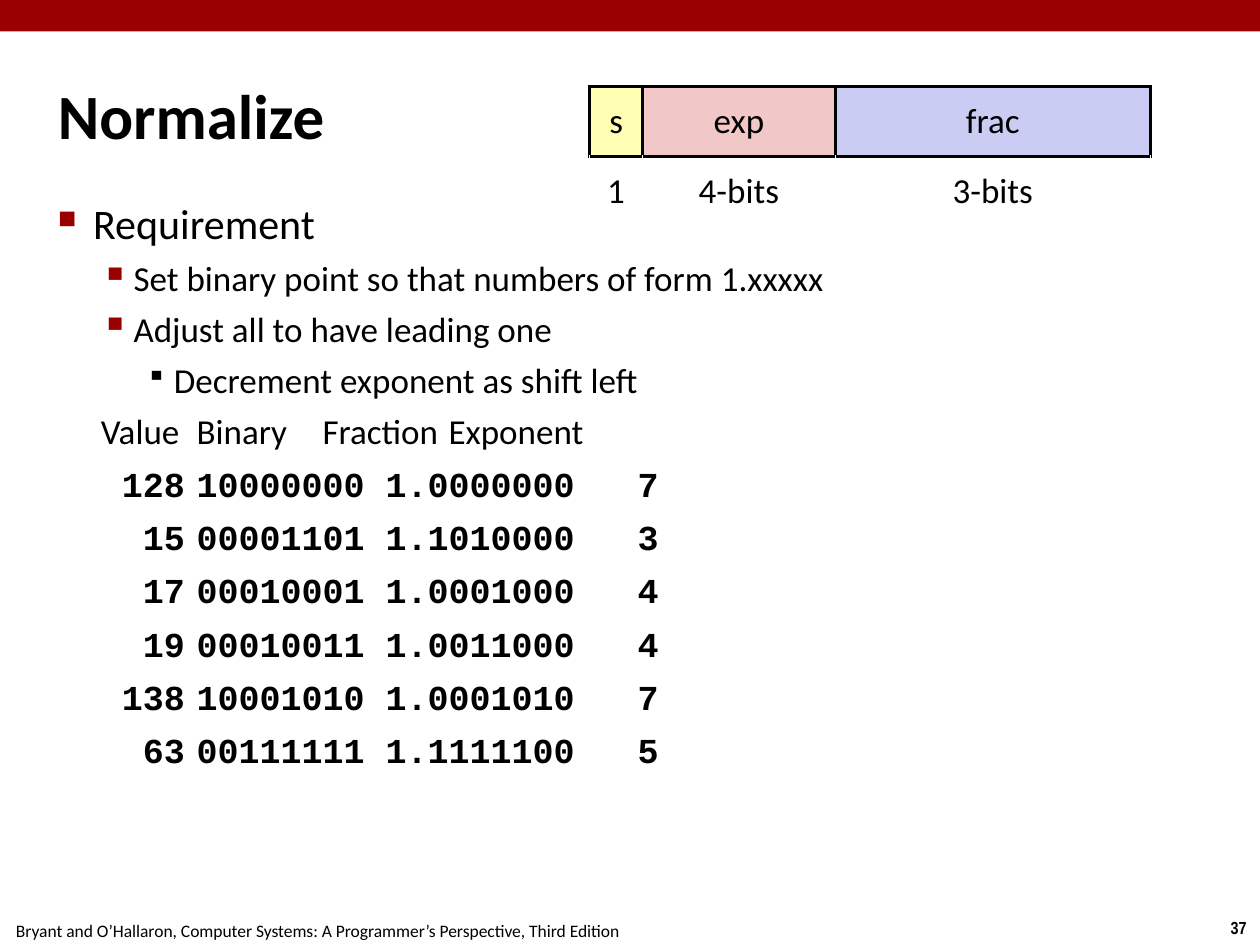
from lxml.etree import SubElement
from pptx import Presentation
from pptx.dml.color import RGBColor
from pptx.enum.shapes import MSO_SHAPE as Shape
from pptx.enum.text import MSO_ANCHOR as Anchor, PP_ALIGN as Align
from pptx.oxml.ns import qn
from pptx.util import Inches, Pt

BLACK, RED = "000000", "990000"
WIDTH, HEIGHT = 10, 7.5
LEFT, BODY_WIDTH, INSET = 0.42, 9.17, 0.04

FOOTER = "Bryant and O’Hallaron, Computer Systems: A Programmer’s Perspective, Third Edition"
BULLETS = [
    ("requirement", "Requirement"),
    ("step", "Set binary point so that numbers of form 1.xxxxx"),
    ("step", "Adjust all to have leading one"),
    ("detail", "Decrement exponent as shift left"),
]
HEADINGS = ["Value", "Binary", "Fraction", "Exponent"]
NUMBERS = [
    (128, "10000000", "1.0000000", 7),
    (15, "00001101", "1.1010000", 3),
    (17, "00010001", "1.0001000", 4),
    (19, "00010011", "1.0011000", 4),
    (138, "10001010", "1.0001010", 7),
    (63, "00111111", "1.1111100", 5),
]
FIELDS = [
    ("s", "1", 0.42, "FFFEB2"),
    ("exp", "4-bits", 1.53, "F1C7C7"),
    ("frac", "3-bits", 2.5, "CBCCF3"),
]
# level, left margin, hanging, size, space before, font, bold, bullet
STYLES = {
    "requirement": (0, 0.28, 0.28, 24, 6, "Calibri", False, ("■", RED, 60)),
    "step": (1, 0.6, 0.26, 20, 5, "Calibri", False, ("▪", RED, 110)),
    "detail": (2, 0.92, 0.22, 20, 5, "Calibri", False, ("▪", BLACK, 80)),
    "heading": (1, 0.6, 0.26, 20, 5, "Calibri", False, None),
    "number": (1, 0.6, 0.26, 20, 6.4, "Courier New", True, None),
}


def color(value):
    return RGBColor.from_string(value)


def style_runs(para, size, font="Calibri", bold=False):
    for span in para.runs:
        span.font.size, span.font.name, span.font.bold = Pt(size), font, bold
        span.font.color.rgb = color(BLACK)


def add_text(page, area, text, size, font="Calibri", bold=False, align=Align.LEFT,
             anchor=Anchor.TOP, wrap=True, inset=INSET):
    frame = page.shapes.add_textbox(*map(Inches, area)).text_frame
    frame.word_wrap, frame.vertical_anchor = wrap, anchor
    for side in ("left", "top", "right", "bottom"):
        setattr(frame, f"margin_{side}", Inches(inset))
    frame.text = text
    for para in frame.paragraphs:
        para.alignment = align
        style_runs(para, size, font, bold)
    return frame


def style_paragraph(para, style):
    level, margin, hanging, size, before, font, bold, bullet = STYLES[style]
    para.level, para.space_before = level, Pt(before)
    style_runs(para, size, font, bold)
    props = para._p.get_or_add_pPr()
    props.set("marL", str(Inches(margin)))
    props.set("indent", str(-Inches(hanging)))
    if bullet:
        char, tint, share = bullet
        SubElement(SubElement(props, qn("a:buClr")), qn("a:srgbClr"), val=tint)
        SubElement(props, qn("a:buSzPct"), val=str(share * 1000))
        SubElement(props, qn("a:buChar"), char=char)
    else:
        SubElement(props, qn("a:buNone"))


def add_border(cell, sides):
    props = cell._tc.get_or_add_tcPr()
    for position, side in enumerate(sides):
        line = props.makeelement(qn(f"a:ln{side}"), {"w": str(Pt(2))})
        fill = SubElement(line, qn("a:solidFill"))
        SubElement(fill, qn("a:srgbClr"), val=BLACK)
        props.insert(position, line)


def add_field_table(page):
    widths = [field[2] for field in FIELDS]
    area = (4.68, 0.69, sum(widths), 1.11)
    table = page.shapes.add_table(2, len(FIELDS), *map(Inches, area)).table
    table.first_row = table.horz_banding = False
    for column, (name, bits, width, tint) in enumerate(FIELDS):
        table.columns[column].width = Inches(width)
        for row, text in enumerate((name, bits)):
            cell = table.cell(row, column)
            cell.text = text
            cell.vertical_anchor = Anchor.MIDDLE
            for side in ("left", "top", "right", "bottom"):
                setattr(cell, f"margin_{side}", Inches(0.06))
            para = cell.text_frame.paragraphs[0]
            para.alignment = Align.CENTER
            style_runs(para, 20)
            if row == 0:
                cell.fill.solid()
                cell.fill.fore_color.rgb = color(tint)
            else:
                cell.fill.background()
            add_border(cell, "LRTB" if row == 0 else "T")


def main():
    deck = Presentation()
    deck.slide_width, deck.slide_height = Inches(WIDTH), Inches(HEIGHT)
    page = deck.slides.add_slide(deck.slide_layouts[6])

    add_text(page, (9.66, 7.23, 0.34, 0.27), "37", 10, "Arial Narrow", True,
             Align.CENTER, wrap=False, inset=0.05)
    add_text(page, (-0.02, 7.25, 5.08, 0.27), FOOTER, 10,
             align=Align.CENTER, wrap=False, inset=0.05)

    band = page.shapes.add_shape(Shape.RECTANGLE, 0, 0, Inches(WIDTH), Inches(0.25))
    band.shadow.inherit = False
    band.fill.solid()
    band.fill.fore_color.rgb = color(RED)
    band.line.fill.background()

    add_text(page, (LEFT, 0.28, BODY_WIDTH, 1.25), "Normalize", 36, bold=True,
             anchor=Anchor.MIDDLE)

    rows = BULLETS + [("heading", "\t".join(HEADINGS))]
    rows += [("number", f"{value:>4}\t{binary}\t{fraction}\t{exponent}")
             for value, binary, fraction, exponent in NUMBERS]
    body = add_text(page, (LEFT, 1.53, BODY_WIDTH, 5.94),
                    "\n".join(text for style, text in rows), 20)
    for para, (style, text) in zip(body.paragraphs, rows):
        style_paragraph(para, style)

    add_field_table(page)
    deck.save("out.pptx")


if __name__ == "__main__":
    main()
